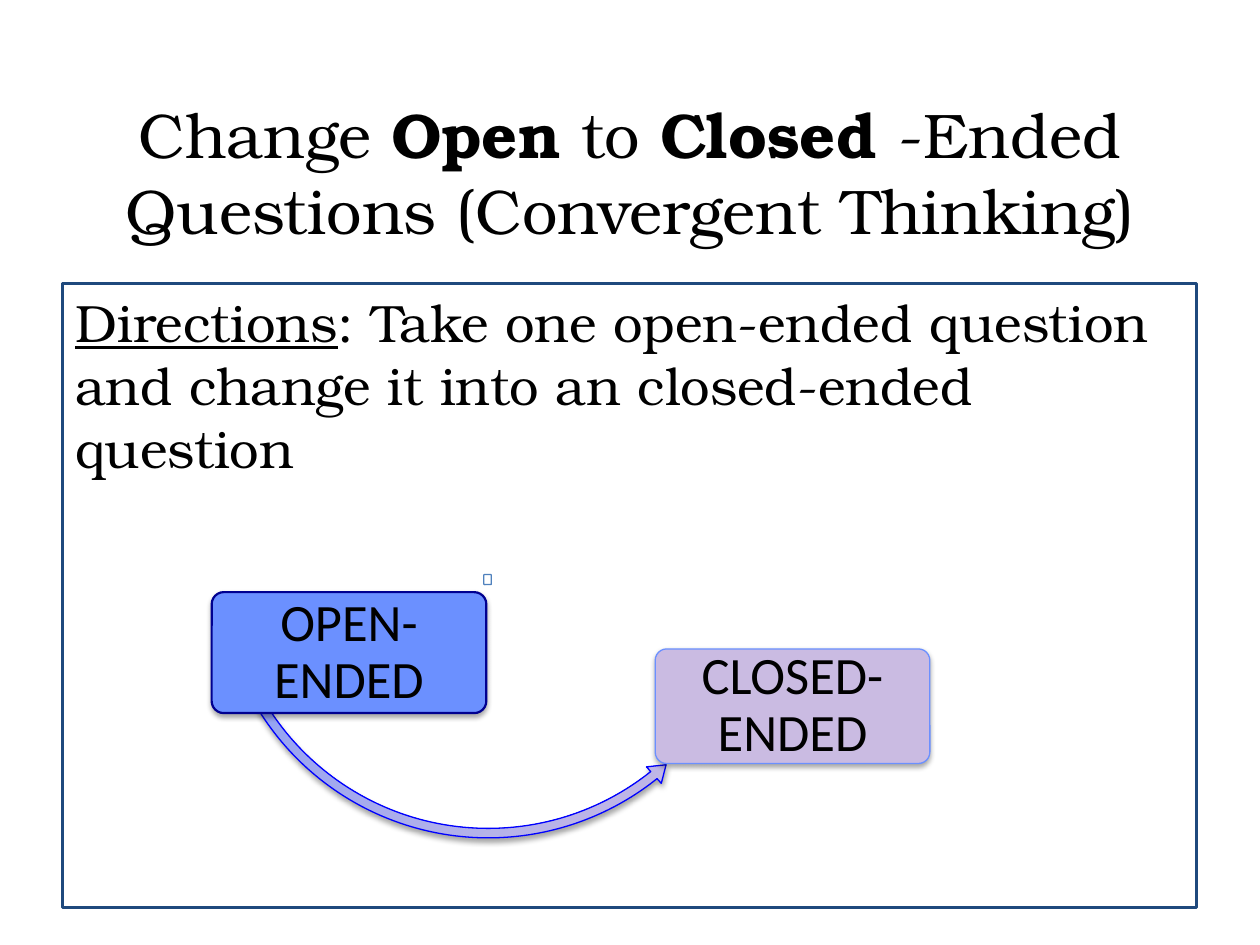
from dataclasses import dataclass

from lxml import etree
from pptx import Presentation
from pptx.dml.color import RGBColor
from pptx.enum.shapes import MSO_SHAPE
from pptx.enum.text import MSO_ANCHOR, PP_ALIGN
from pptx.oxml.ns import qn
from pptx.util import Inches, Pt

RECT, ROUNDED = MSO_SHAPE.RECTANGLE, MSO_SHAPE.ROUNDED_RECTANGLE
ARC_ARROW = MSO_SHAPE.LEFT_CIRCULAR_ARROW
CENTER, LEFT = PP_ALIGN.CENTER, PP_ALIGN.LEFT
MIDDLE, TOP = MSO_ANCHOR.MIDDLE, MSO_ANCHOR.TOP

WIDTH, HEIGHT = 10, 7.5
SERIF, SANS = "TeX Gyre Bonum", "Calibri"
BLUE, LILAC = "6B90FF", "CABBE2"
LABEL_GAP = 0.02


@dataclass
class Card:
    label: str
    left: float
    top: float
    height: float
    fill: str
    line: str
    line_width: float
    width: float = 2.18


CARDS = [
    Card("OPEN-ENDED", 1.68, 4.7, 0.96, BLUE, "000090", 1.25),
    Card("CLOSED-ENDED", 5.2, 5.15, 0.91, LILAC, BLUE, 0.75),
]


def color(hex_code: str) -> RGBColor:
    return RGBColor.from_string(hex_code)


def place(shape, left: float, top: float, width: float, height: float) -> None:
    shape.left, shape.top = Inches(left), Inches(top)
    shape.width, shape.height = Inches(width), Inches(height)


def add_outlined(slide, kind, box: tuple, line: str, line_width: float, fill: str = ""):
    shape = slide.shapes.add_shape(kind, *map(Inches, box))
    shape.shadow.inherit = False
    if fill:
        shape.fill.solid()
        shape.fill.fore_color.rgb = color(fill)
    else:
        shape.fill.background()
    shape.line.color.rgb = color(line)
    shape.line.width = Pt(line_width)
    return shape


def add_alpha(color_element, percent: int) -> None:
    etree.SubElement(color_element, qn("a:alpha"), val=str(percent * 1000))


def add_soft_shadow(shape) -> None:
    effects = shape._element.spPr.find(qn("a:effectLst"))
    shadow = etree.SubElement(effects, qn("a:outerShdw"), blurRad=str(Pt(3.1)),
                              dist=str(Pt(1.8)), dir="5400000", rotWithShape="0")
    add_alpha(etree.SubElement(shadow, qn("a:srgbClr"), val="000000"), 35)


def set_radial_gradient(shape, stops: list) -> None:
    """Circular gradient that starts at the lower right corner."""
    gradient = etree.Element(qn("a:gradFill"), rotWithShape="1")
    stop_list = etree.SubElement(gradient, qn("a:gsLst"))
    for percent, hex_code in stops:
        stop = etree.SubElement(stop_list, qn("a:gs"), pos=str(percent * 1000))
        etree.SubElement(stop, qn("a:srgbClr"), val=hex_code)
    circle = etree.SubElement(gradient, qn("a:path"))
    circle.set("path", "circle")
    etree.SubElement(circle, qn("a:fillToRect"), l="100000", t="100000")
    properties = shape._element.spPr
    properties.replace(properties.find(qn("a:noFill")), gradient)


def write_text(shape, runs: list, *, font: str, size: float, align=LEFT, anchor=TOP,
               line_spacing: float = 1.0, insets: tuple = (0.1, 0.05)) -> None:
    """Each run is a text and the name of its emphasis: bold, underline or none."""
    frame = shape.text_frame
    frame.word_wrap = True
    frame.vertical_anchor = anchor
    frame.margin_left = frame.margin_right = Inches(insets[0])
    frame.margin_top = frame.margin_bottom = Inches(insets[1])
    paragraph = frame.paragraphs[0]
    paragraph.alignment = align
    paragraph.line_spacing = line_spacing
    for text, emphasis in runs:
        run = paragraph.add_run()
        run.text = text
        run.font.name, run.font.size = font, Pt(size)
        run.font.color.rgb = color("000000")
        run.font.bold = emphasis == "bold"
        run.font.underline = emphasis == "underline"


def add_card(slide, card: Card) -> None:
    box = (card.left, card.top, card.width, card.height)
    panel = add_outlined(slide, ROUNDED, box, card.line, card.line_width, card.fill)
    panel.adjustments[0] = 0.1
    add_soft_shadow(panel)
    label = slide.shapes.add_textbox(0, 0, 0, 0)
    place(label, card.left + LABEL_GAP, card.top + LABEL_GAP,
          card.width - 2 * LABEL_GAP, card.height - 2 * LABEL_GAP)
    write_text(label, [(card.label, "")], font=SANS, size=30, align=CENTER,
               anchor=MIDDLE, line_spacing=0.9, insets=(0.06, 0.04))


def main() -> None:
    deck = Presentation()
    deck.slide_width, deck.slide_height = Inches(WIDTH), Inches(HEIGHT)
    slide = deck.slides.add_slide(deck.slide_layouts[5])

    # Title
    title = slide.shapes.title
    place(title, 0, 0.81, WIDTH, 1.1)
    write_text(title, [("Change ", ""), ("Open", "bold"), (" to ", ""),
                       ("Closed ", "bold"),
                       ("-Ended Questions (Convergent Thinking)", "")],
               font=SERIF, size=36, align=CENTER, anchor=MIDDLE)

    # Directions in the framed area
    margin = WIDTH * 0.05
    directions = add_outlined(slide, RECT, (margin, HEIGHT * 0.3, WIDTH - 2 * margin,
                                            HEIGHT * 0.66), "1F497D", 1.75)
    write_text(directions, [("Directions", "underline"),
                            (": Take one open-ended question and change it into "
                             "an closed-ended question", "")], font=SERIF, size=30)

    # Small marker above the first card
    marker = add_outlined(slide, ROUNDED, (3.84, 4.56, 0.06, 0.08),
                          "4F81BD", 0.75, "FFFFFF")
    marker.adjustments[0] = 0.1
    add_alpha(marker._element.spPr.find(qn("a:solidFill"))[0], 90)

    # Curved arrow from open to closed, then the cards over it
    arrow = add_outlined(slide, ARC_ARROW, (1.68, 2.31, 4.39, 4.39), "0000FF", 0.75)
    for index, value in enumerate((0.017, 2.066, 30.84, 101.26, 0.02)):
        arrow.adjustments[index] = value
    set_radial_gradient(arrow, [(4, LILAC), (100, BLUE)])
    add_soft_shadow(arrow)
    for card in CARDS:
        add_card(slide, card)

    deck.save("out.pptx")


if __name__ == "__main__":
    main()
